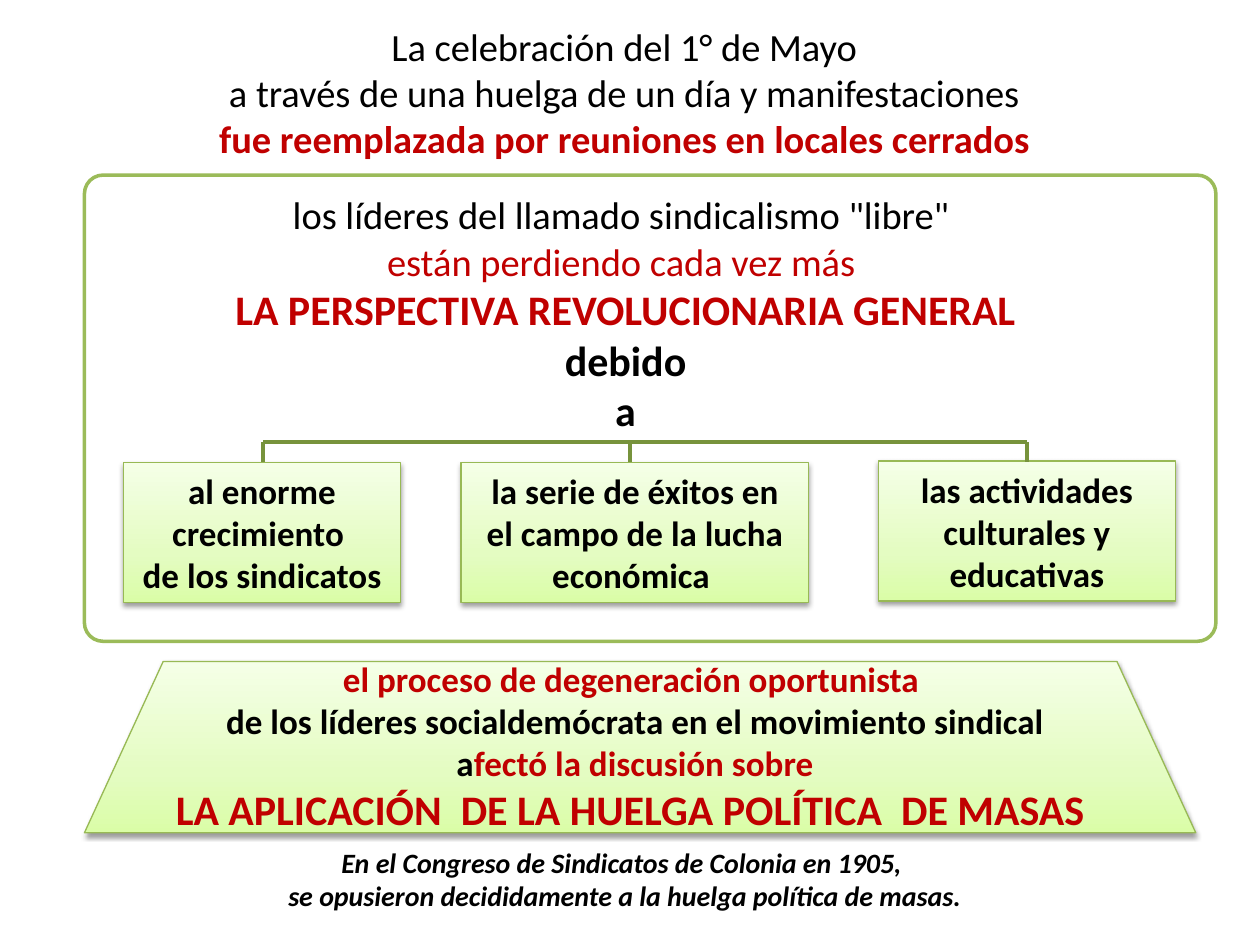
from lxml.etree import SubElement
from pptx import Presentation
from pptx.dml.color import RGBColor
from pptx.enum.shapes import MSO_CONNECTOR, MSO_SHAPE
from pptx.enum.text import MSO_ANCHOR, MSO_AUTO_SIZE, PP_ALIGN
from pptx.oxml.ns import qn
from pptx.util import Inches, Pt

BLACK = RGBColor(0x00, 0x00, 0x00)
WHITE = RGBColor(0xFF, 0xFF, 0xFF)
RED = RGBColor(0xC0, 0x00, 0x00)
FRAME_GREEN = RGBColor(0x9B, 0xBB, 0x59)
EDGE_GREEN = RGBColor(0x98, 0xB9, 0x55)
BRACKET_GREEN = RGBColor(0x77, 0x93, 0x3C)
GRADIENT = [
    (0, RGBColor(0xDA, 0xFD, 0xA7)),
    (35, RGBColor(0xE4, 0xFC, 0xC2)),
    (100, RGBColor(0xF5, 0xFF, 0xE7)),
]


def write_text(shape, paragraphs, italic=False):
    """Fill a shape with centred paragraphs of (text, size, colour, bold) runs."""
    frame = shape.text_frame
    frame.word_wrap = True
    frame.auto_size = MSO_AUTO_SIZE.SHAPE_TO_FIT_TEXT
    for index, runs in enumerate(paragraphs):
        paragraph = frame.add_paragraph() if index else frame.paragraphs[0]
        paragraph.alignment = PP_ALIGN.CENTER
        for text, size, color, bold in runs:
            run = paragraph.add_run()
            run.text = text
            run.font.name = "Calibri"
            run.font.size = Pt(size)
            run.font.color.rgb = color
            run.font.bold = bold
            run.font.italic = italic


def style_green(shape):
    """Give a shape the pale green gradient, thin edge and soft shadow."""
    shape.fill.gradient()
    shape.fill.gradient_angle = 90
    stops = shape._element.spPr.find(qn("a:gradFill")).find(qn("a:gsLst"))
    for stop in list(stops):
        stops.remove(stop)
    for position, color in GRADIENT:
        stop = SubElement(stops, qn("a:gs"), pos=str(position * 1000))
        SubElement(stop, qn("a:srgbClr"), val=str(color))
    shape.line.color.rgb = EDGE_GREEN
    shape.line.width = Pt(0.75)
    shape.shadow.inherit = False
    effects = shape._element.spPr.find(qn("a:effectLst"))
    shadow = SubElement(effects, qn("a:outerShdw"), blurRad=str(Pt(3.1)),
                        dist=str(Pt(1.6)), dir="5400000", rotWithShape="0")
    shadow_color = SubElement(shadow, qn("a:srgbClr"), val=str(BLACK))
    SubElement(shadow_color, qn("a:alpha"), val="38000")


presentation = Presentation()
presentation.slide_width = Inches(10)
presentation.slide_height = Inches(7.5)
slide = presentation.slides.add_slide(presentation.slide_layouts[6])
shapes = slide.shapes

# Trapezoid behind the conclusion
trapezoid = shapes.add_shape(MSO_SHAPE.TRAPEZOID, Inches(0.67), Inches(5.25),
                             Inches(8.82), Inches(1.36))
trapezoid.adjustments[0] = 0.46
style_green(trapezoid)

# Rounded frame around the causes
frame_box = shapes.add_shape(MSO_SHAPE.ROUNDED_RECTANGLE, Inches(0.67), Inches(1.39),
                             Inches(8.98), Inches(3.7))
frame_box.adjustments[0] = 0.04
frame_box.fill.solid()
frame_box.fill.fore_color.rgb = WHITE
frame_box.line.color.rgb = FRAME_GREEN
frame_box.line.width = Pt(2)
frame_box.shadow.inherit = False

# Text blocks: heading, conclusion, perspective, closing note
text_blocks = [
    (0.54, 0.13, 8.9, 1.21, False, [
        [("La celebración del 1° de Mayo ", 22, BLACK, False)],
        [("a través de una huelga de un día y manifestaciones ", 22, BLACK, False)],
        [("fue reemplazada por reuniones en locales cerrados ", 22, RED, True)],
    ]),
    (0.59, 5.17, 8.9, 1.51, False, [
        [("el proceso de degeneración oportunista ", 20, RED, True)],
        [("de los líderes socialdemócrata en el movimiento sindical", 20, BLACK, True)],
        [(" a", 20, BLACK, True), ("fectó la discusión sobre ", 20, RED, True)],
        [("LA APLICACIÓN  DE LA HUELGA POLÍTICA  DE MASAS ", 24, RED, True)],
    ]),
    (1.46, 1.47, 7.01, 2.46, False, [
        [("los líderes del llamado sindicalismo \"libre\" ", 22, BLACK, False)],
        [("están perdiendo cada vez más ", 22, RED, False)],
        [("LA PERSPECTIVA REVOLUCIONARIA GENERAL", 24, RED, True)],
        [("debido", 24, BLACK, True)],
        [("a", 24, BLACK, True)],
    ]),
    (0.51, 6.66, 8.9, 0.64, True, [
        [("En el Congreso de Sindicatos de Colonia en 1905, ", 16, BLACK, True)],
        [("se opusieron decididamente a la huelga política de masas.", 16, BLACK, True)],
    ]),
]
for left, top, width, height, italic, paragraphs in text_blocks:
    text_box = shapes.add_textbox(Inches(left), Inches(top), Inches(width), Inches(height))
    write_text(text_box, paragraphs, italic)

# Three causes
causes = [
    (0.98, 3.67, 2.2, ["al enorme crecimiento ", "de los sindicatos"]),
    (3.66, 3.67, 2.76, ["la serie de éxitos en", "el campo de la lucha económica "]),
    (6.97, 3.66, 2.36, ["las actividades culturales y educativas"]),
]
for left, top, width, lines in causes:
    cause = shapes.add_shape(MSO_SHAPE.RECTANGLE, Inches(left), Inches(top),
                             Inches(width), Inches(1.11))
    style_green(cause)
    cause.text_frame.vertical_anchor = MSO_ANCHOR.MIDDLE
    write_text(cause, [[(line, 20, BLACK, True)] for line in lines])

# Bracket: one bar and a drop to each cause
bar_top, drop_bottom = 3.51, 3.67
drops = [2.09, 5, 8.15]
segments = [(drops[0], bar_top, drops[-1], bar_top)]
segments += [(x, bar_top, x, drop_bottom) for x in drops]
for start_x, start_y, end_x, end_y in segments:
    connector = shapes.add_connector(MSO_CONNECTOR.STRAIGHT, Inches(start_x), Inches(start_y),
                                     Inches(end_x), Inches(end_y))
    connector.line.color.rgb = BRACKET_GREEN
    connector.line.width = Pt(2.25)
    SubElement(connector._element.spPr, qn("a:effectLst"))

presentation.save("out.pptx")
